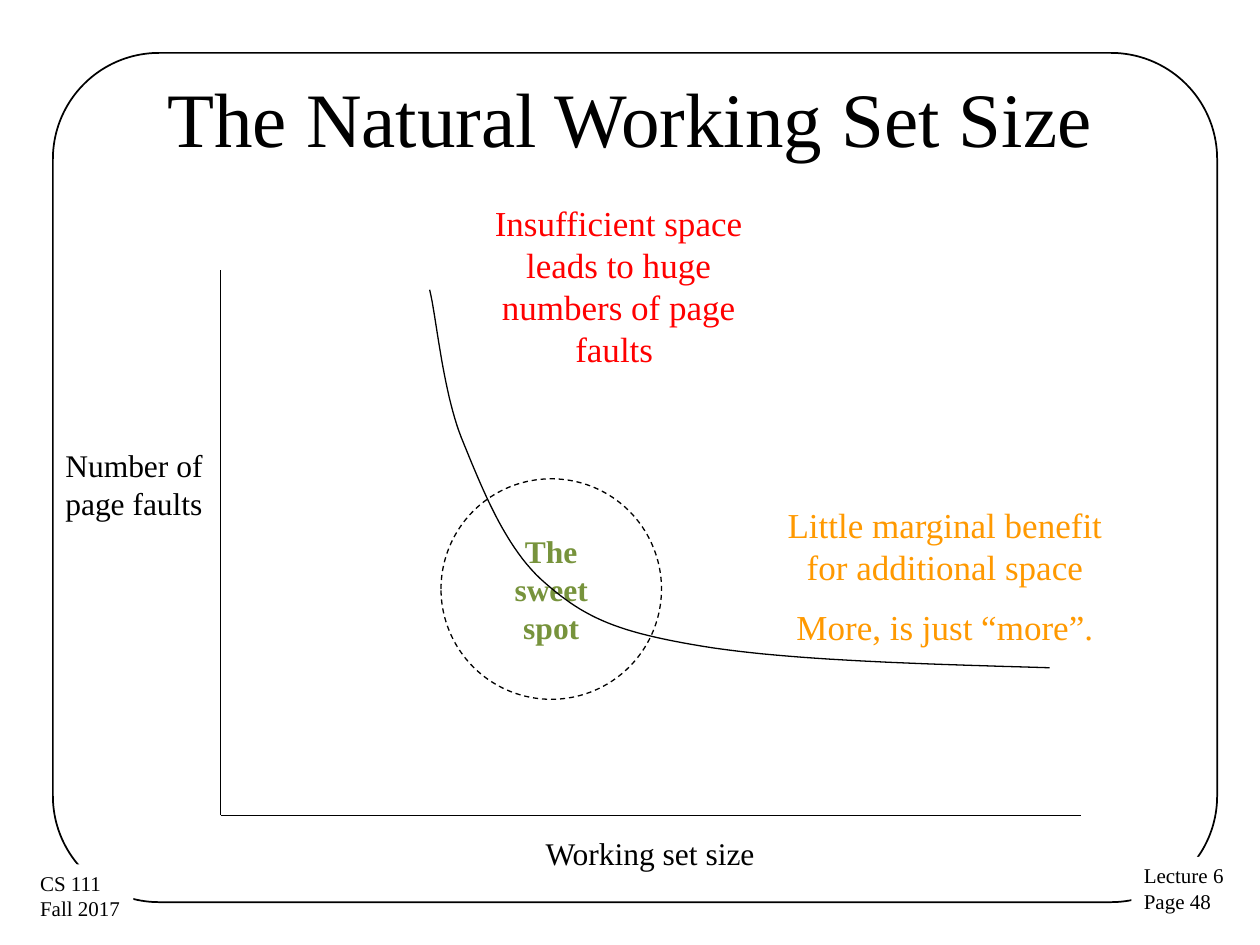
"""Build the lecture slide on the natural working set size."""
from pptx import Presentation
from pptx.dml.color import RGBColor
from pptx.enum.dml import MSO_LINE
from pptx.enum.shapes import MSO_CONNECTOR, MSO_SHAPE
from pptx.enum.text import MSO_ANCHOR, PP_ALIGN
from pptx.oxml.ns import qn
from pptx.util import Inches, Pt
from lxml.etree import SubElement

WIDTH, HEIGHT = 10, 7.5
BLACK, WHITE, RED, ORANGE, GREEN = "000000", "FFFFFF", "FF0000", "FF9900", "77933C"
FONT = "Times New Roman"

FRAME = (0.42, 0.42, 9.24, 6.74)
CORNER_LABELS = [
    (["Lecture 6", "Page 48"], (8.98, 6.8, 0.84, 0.51)),
    (["CS 111", "Fall 2017"], (0.22, 6.86, 0.84, 0.51)),
]
TITLE = (["The Natural Working Set Size"], (0.5, 0.3, 9, 1.25))
AXIS_LABELS = [
    (["Number of page faults"], (0.42, 3.49, 1.51, 1.31), PP_ALIGN.LEFT),
    (["Working set size"], (3.66, 6.57, 3, 0.51), PP_ALIGN.CENTER),
]
REMARKS = [
    (["Insufficient space leads to huge numbers of page faults "],
     (3.66, 1.55, 2.5, 1.45), RED),
    (["Little marginal benefit for additional space", "More, is just “more”."],
     (6.12, 3.95, 2.76, 1.28), ORANGE),
]
SWEET_SPOT = (["The", "sweet", "spot"], (3.5, 3.8, 1.75, 1.75))
ORIGIN = (1.75, 6.47)
AXIS_ENDS = [(1.75, 2.14), (8.58, 6.47)]
CURVE_START = (8.33, 5.3)
CURVE_PIECES = [
    [(7.29, 5.27), (6.25, 5.24), (5.58, 5.13)],
    [(4.91, 5.02), (4.65, 4.91), (4.33, 4.63)],
    [(4.01, 4.36), (3.82, 3.86), (3.66, 3.47)],
    [(3.51, 3.08), (3.46, 2.49), (3.41, 2.3)],
]
STEPS = 24


def color(value):
    """Turn a hex string into a colour."""
    return RGBColor.from_string(value)


def inches(values):
    """Turn a sequence of inches into lengths."""
    return [Inches(value) for value in values]


def set_line(shape, width):
    """Give a shape or connector a black line."""
    shape.line.color.rgb = color(BLACK)
    shape.line.width = Pt(width)


def add_outline(slide, kind, box, width=None, fill=None):
    """Add a preset shape without shadow, with an optional line and fill."""
    shape = slide.shapes.add_shape(kind, *inches(box))
    shape.shadow.inherit = False
    if fill:
        shape.fill.solid()
        shape.fill.fore_color.rgb = color(fill)
    else:
        shape.fill.background()
    if width:
        set_line(shape, width)
    else:
        shape.line.fill.background()
    return shape


def write(shape, lines, size=18, ink=BLACK, align=PP_ALIGN.CENTER, bold=False,
          anchor=MSO_ANCHOR.TOP, wrap=True, gap=0):
    """Write one paragraph per line into a shape."""
    frame = shape.text_frame
    frame.word_wrap = wrap
    frame.vertical_anchor = anchor
    frame.text = "\n".join(lines)
    for index, paragraph in enumerate(frame.paragraphs):
        paragraph.alignment = align
        paragraph.space_before = Pt(gap if index else 0)
        font = paragraph.runs[0].font
        font.name, font.size, font.bold = FONT, Pt(size), bold
        font.color.rgb = color(ink)


def add_text(slide, lines, box, **text_format):
    """Add a text box."""
    write(slide.shapes.add_textbox(*inches(box)), lines, **text_format)


def add_axis(slide, start, end):
    """Add a straight axis line."""
    axis = slide.shapes.add_connector(MSO_CONNECTOR.STRAIGHT, *inches(start + end))
    set_line(axis, 0.75)
    SubElement(axis._element.spPr, qn("a:effectLst"))


def curve_points():
    """Compute points along the cubic curve pieces."""
    start = CURVE_START
    for first, second, end in CURVE_PIECES:
        for step in range(1, STEPS + 1):
            t = step / STEPS
            u = 1 - t
            yield inches(u**3 * a + 3 * u * u * t * b + 3 * u * t * t * c + t**3 * d
                         for a, b, c, d in zip(start, first, second, end))
        start = end


def add_curve(slide):
    """Draw the page fault curve."""
    builder = slide.shapes.build_freeform(*inches(CURVE_START))
    builder.add_line_segments(list(curve_points()), close=False)
    curve = builder.convert_to_shape()
    curve.shadow.inherit = False
    curve.fill.background()
    set_line(curve, 0.75)


def main():
    """Build and save the slide."""
    presentation = Presentation()
    presentation.slide_width, presentation.slide_height = inches((WIDTH, HEIGHT))
    slide = presentation.slides.add_slide(presentation.slide_layouts[6])

    frame = add_outline(slide, MSO_SHAPE.ROUNDED_RECTANGLE, FRAME, width=1)
    frame.adjustments[0] = 0.125
    for lines, box in CORNER_LABELS:
        label = add_outline(slide, MSO_SHAPE.RECTANGLE, box, fill=WHITE)
        write(label, lines, size=12, align=PP_ALIGN.LEFT, wrap=False)
    add_text(slide, *TITLE, size=44, anchor=MSO_ANCHOR.MIDDLE)

    for end in AXIS_ENDS:
        add_axis(slide, ORIGIN, end)
    for lines, box, align in AXIS_LABELS:
        add_text(slide, lines, box, align=align)

    lines, box = SWEET_SPOT
    spot = add_outline(slide, MSO_SHAPE.OVAL, box, width=0.75)
    spot.line.dash_style = MSO_LINE.DASH
    write(spot, lines, ink=GREEN, bold=True, anchor=MSO_ANCHOR.MIDDLE, wrap=False)
    for lines, box, ink in REMARKS:
        add_text(slide, lines, box, size=20, ink=ink, gap=10)
    add_curve(slide)

    presentation.save("out.pptx")


if __name__ == "__main__":
    main()
